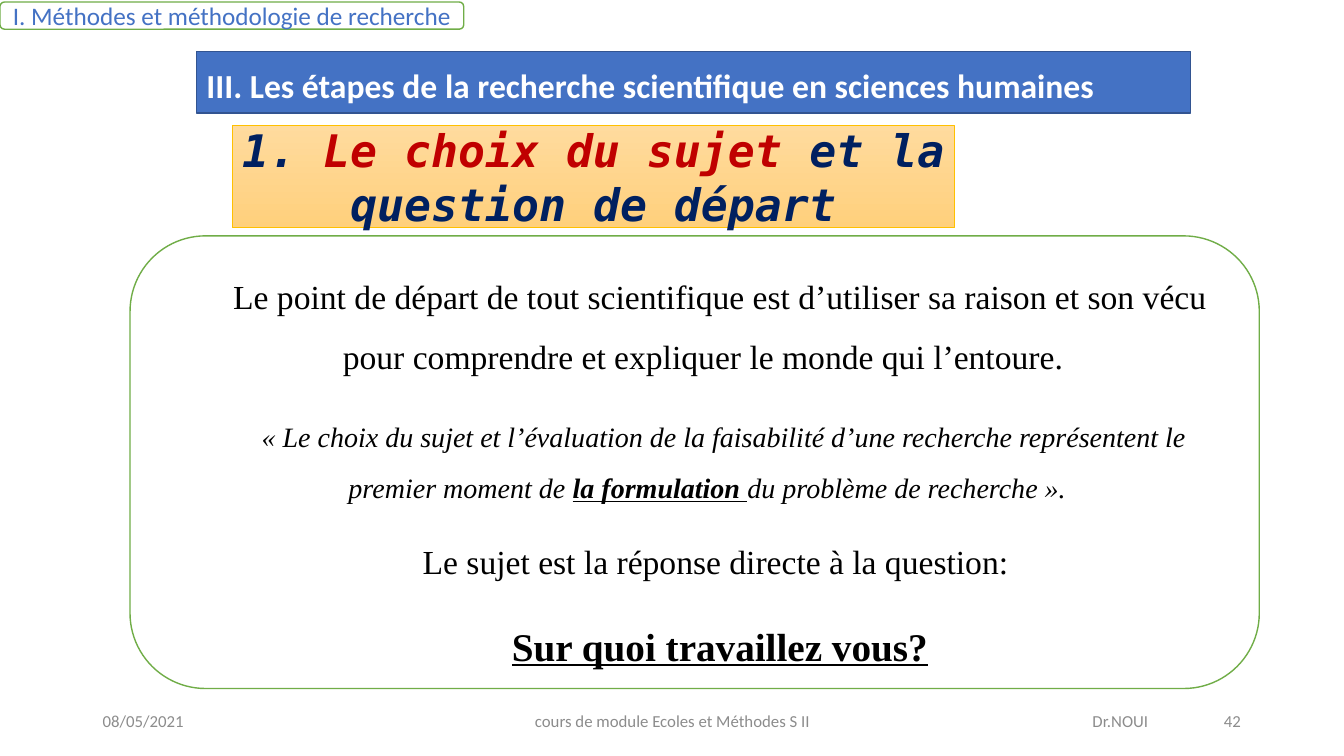
import pptx
import pptx.util
import pptx.dml.color
import pptx.enum.shapes
import pptx.enum.text
import lxml.etree
from dataclasses import dataclass
from pptx.util import Inches

KIND = pptx.enum.shapes.MSO_SHAPE
ALIGN = pptx.enum.text.PP_ALIGN


@dataclass
class Theme:
    """Colours, fonts and type sizes."""
    white: str = "FFFFFF"
    black: str = "000000"
    blue: str = "4472C4"
    edge: str = "325491"
    green: str = "70AD47"
    gold: str = "FFC000"
    light: str = "FFDB9E"
    dark: str = "FFD07C"
    navy: str = "002060"
    red: str = "C00000"
    gray: str = "8C8C8C"
    sans: str = "Calibri"
    mono: str = "DejaVu Sans Mono"
    serif: str = "Times New Roman"
    note: int = 12
    tag: int = 18
    quote: int = 20
    body: int = 24
    ask: int = 28
    title: int = 32


T = Theme()


def rgb(code):
    """Turn a hex code into a colour."""
    return pptx.dml.color.RGBColor.from_string(code)


def style(font, face, size, color, bold=False, italic=False, under=False):
    """Format one font."""
    font.name, font.size = face, pptx.util.Pt(size)
    font.color.rgb = rgb(color)
    font.bold, font.italic, font.underline = bold, italic, under


def write(para, runs, align):
    """Fill a paragraph with runs of text and format."""
    para.alignment = align
    for text, *look in runs:
        run = para.add_run()
        run.text = text
        style(run.font, *look)


def frame(shape):
    """Give a shape wrapped text in the middle."""
    text = shape.text_frame
    text.word_wrap = True
    text.vertical_anchor = pptx.enum.text.MSO_ANCHOR.MIDDLE
    return text


def panel(slide, box, kind, line, fill=None, width=1):
    """Add an outlined shape."""
    shape = slide.shapes.add_shape(kind, *map(Inches, box))
    shape.shadow.inherit = False
    if fill:
        shape.fill.solid()
        shape.fill.fore_color.rgb = rgb(fill)
    shape.line.color.rgb = rgb(line)
    shape.line.width = pptx.util.Pt(width)
    return shape


def foot(slide, box):
    """Place date, course, and author with page number in a row."""
    left, top, width, height = box
    side = 3
    mid = 4.5
    parts = [
        (left, side, "08/05/2021", ALIGN.LEFT, []),
        (left + (width - mid) / 2, mid,
         "cours de module Ecoles et Méthodes S II", ALIGN.CENTER, []),
        (left + width - side, side, "\tDr.NOUI\t42", ALIGN.LEFT, [1.87, 2.79]),
    ]
    for x, w, text, align, stops in parts:
        area = slide.shapes.add_textbox(*map(Inches, (x, top, w, height)))
        para = frame(area).paragraphs[0]
        if stops:
            props = para._p.get_or_add_pPr()
            tabs = lxml.etree.SubElement(props, pptx.oxml.ns.qn("a:tabLst"))
            for stop in stops:
                lxml.etree.SubElement(tabs, pptx.oxml.ns.qn("a:tab"),
                                      pos=str(Inches(stop)), algn="r")
        write(para, [(text, T.sans, T.note, T.gray)], align)


def tag(slide, box):
    """Place the chapter tag."""
    shape = panel(slide, box, KIND.ROUNDED_RECTANGLE, T.green, T.white)
    text = "I. Méthodes et méthodologie de recherche "
    write(frame(shape).paragraphs[0], [(text, T.sans, T.tag, T.blue)],
          ALIGN.CENTER)


def head(slide, box):
    """Place the section heading."""
    shape = panel(slide, box, KIND.RECTANGLE, T.edge, T.blue)
    para = frame(shape).paragraphs[0]
    text = "III. Les étapes de la recherche scientifique en sciences humaines"
    write(para, [(text, T.sans, T.body, T.white, True)], ALIGN.JUSTIFY)
    para.line_spacing = 1.15


def card(slide, box):
    """Place the main text in a rounded card."""
    shape = panel(slide, box, KIND.ROUNDED_RECTANGLE, T.green, T.white)
    plain = (T.serif, T.body, T.black)
    quote = (T.serif, T.quote, T.black)
    lines = [
        [("Le point de départ de tout scientifique est d’utiliser sa raison "
          "et son vécu pour comprendre et expliquer le monde qui l’entoure. ",
          *plain)],
        [(" ", *plain, False, True),
         ("« Le choix du sujet et l’évaluation de la faisabilité d’une "
          "recherche représentent le premier moment de ", *quote, False, True),
         ("la formulation ", *quote, True, True, True),
         ("du problème de recherche ».", *quote, False, True)],
        [("Le sujet est la réponse directe à la question: ", *plain)],
        [("Sur quoi travaillez vous?", T.serif, T.ask, T.black,
          True, False, True)],
    ]
    text = frame(shape)
    last = len(lines) - 1
    for i, runs in enumerate(lines):
        para = text.add_paragraph() if i else text.paragraphs[0]
        props = para._p.get_or_add_pPr()
        props.set("marL", str(Inches(0.25)))
        props.set("indent", str(Inches(0.25)))
        write(para, runs, ALIGN.CENTER)
        para.line_spacing = 1.5
        para.space_before = pptx.util.Pt(6 if i else 0)
        para.space_after = pptx.util.Pt(6 if i < last else 0)


def title(slide, box):
    """Place the step title on a gold gradient."""
    shape = panel(slide, box, KIND.RECTANGLE, T.gold, width=0.5)
    shape.fill.gradient()
    shape.fill.gradient_angle = 270
    for stop, color in zip(shape.fill.gradient_stops, (T.light, T.dark)):
        stop.color.rgb = rgb(color)
    parts = [("1. ", T.navy), ("Le choix du sujet ", T.red),
             ("et la question de départ", T.navy)]
    runs = [(text, T.mono, T.title, color, True, True)
            for text, color in parts]
    write(frame(shape).paragraphs[0], runs, ALIGN.CENTER)


def main():
    """Build and save the slide."""
    deck = pptx.Presentation()
    deck.slide_width, deck.slide_height = Inches(13.33), Inches(7.5)
    slide = deck.slides.add_slide(deck.slide_layouts[6])
    foot(slide, (0.92, 6.95, 11.5, 0.4))
    tag(slide, (0, 0.02, 4.6, 0.27))
    head(slide, (1.95, 0.51, 9.86, 0.61))
    card(slide, (1.29, 2.34, 11.2, 4.49))
    title(slide, (2.3, 1.24, 7.17, 1.02))
    deck.save("out.pptx")


if __name__ == "__main__":
    main()
